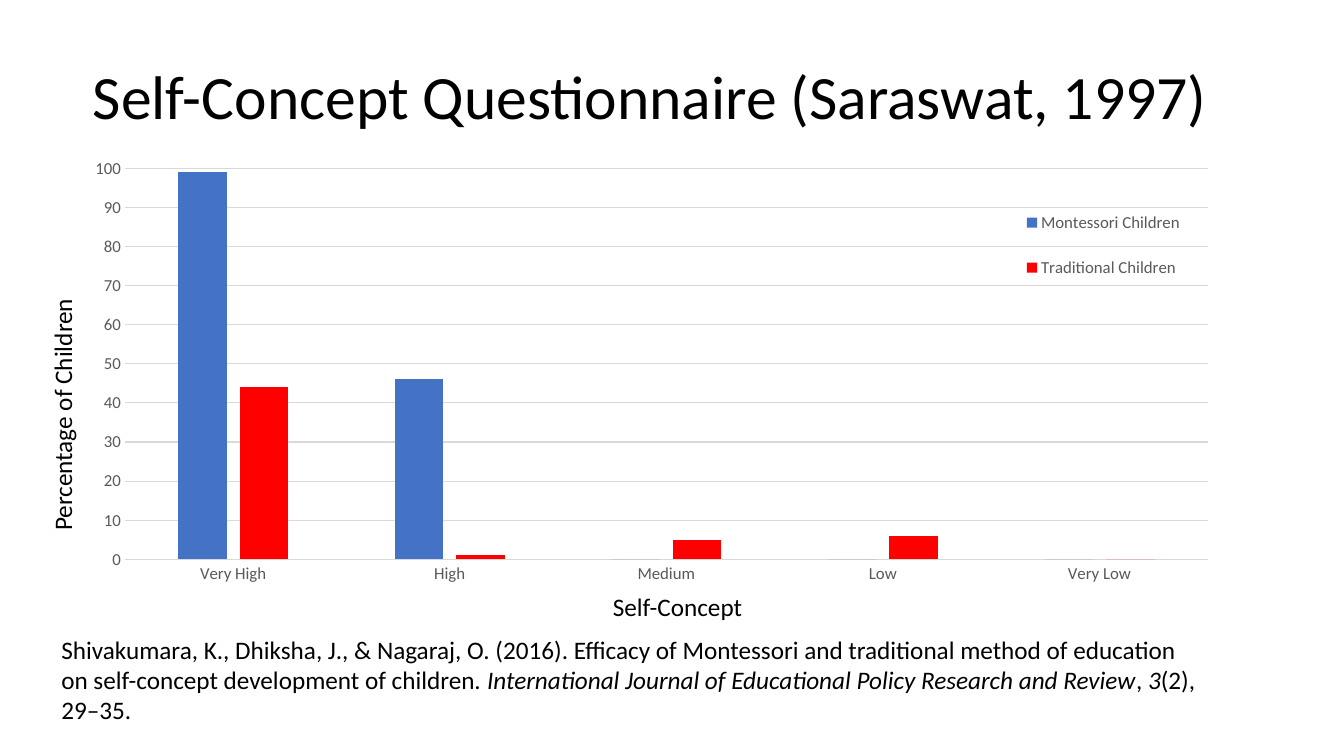
from dataclasses import dataclass

from lxml import etree
from pptx import Presentation
from pptx.chart.data import CategoryChartData
from pptx.dml.color import RGBColor
from pptx.enum import chart as ch, text as tx
from pptx.util import Inches, Pt


@dataclass(frozen=True)
class Theme:
    font: str = "Calibri"
    ink: str = "000000"
    grey: str = "595959"
    grid: str = "D9D9D9"
    bars: tuple = ("4472C4", "FF0000")
    title: int = 44
    body: int = 18
    label: int = 12
    line: float = 0.75


THEME = Theme()
LEVELS = ("Very High", "High", "Medium", "Low", "Very Low")
SCORES = {
    "Montessori Children": (99, 46, 0, 0, 0),
    "Traditional Children": (44, 1, 5, 6, 0),
}
SOURCE = (
    ("Shivakumara, K., Dhiksha, J., & Nagaraj, O. (2016). Efficacy of "
     "Montessori and traditional method of education on self-concept "
     "development of children. ", False),
    ("International Journal of Educational Policy Research and Review", True),
    (", ", False),
    ("3", True),
    ("(2), 29–35.", False),
)


def style(font, size, color=THEME.ink):
    font.name = THEME.font
    font.size = Pt(size)
    font.color.rgb = RGBColor.from_string(color)


def place(shape, left, top, width, height):
    shape.left, shape.top = Inches(left), Inches(top)
    shape.width, shape.height = Inches(width), Inches(height)


def add_title(slide, words, box):
    title = slide.shapes.title
    place(title, *box)
    frame = title.text_frame
    frame.text = words
    frame.word_wrap = False
    frame.auto_size = tx.MSO_AUTO_SIZE.SHAPE_TO_FIT_TEXT
    frame.vertical_anchor = tx.MSO_ANCHOR.TOP
    para = frame.paragraphs[0]
    para.alignment = tx.PP_ALIGN.LEFT
    style(para.font, THEME.title)


def add_text(slide, parts, box, turn=0):
    """Add a text box from (words, italic) pairs."""
    shape = slide.shapes.add_textbox(*map(Inches, box))
    shape.rotation = turn
    frame = shape.text_frame
    frame.word_wrap = True
    frame.auto_size = tx.MSO_AUTO_SIZE.SHAPE_TO_FIT_TEXT
    para = frame.paragraphs[0]
    style(para.font, THEME.body)
    for words, slant in parts:
        run = para.add_run()
        run.text = words
        if slant:
            run.font.italic = True


def make_layout(left, top, width, height, inner=False):
    """Return a chart layout element; lengths are shares of the chart."""
    space = "http://schemas.openxmlformats.org/drawingml/2006/chart"
    layout = etree.Element(f"{{{space}}}layout", nsmap={"c": space})
    manual = etree.SubElement(layout, f"{{{space}}}manualLayout")
    pairs = [("layoutTarget", "inner")] if inner else []
    pairs += [("xMode", "edge"), ("yMode", "edge"),
              ("x", left), ("y", top), ("w", width), ("h", height)]
    for name, value in pairs:
        etree.SubElement(manual, f"{{{space}}}{name}", val=str(value))
    return layout


def set_line(line):
    line.color.rgb = RGBColor.from_string(THEME.grid)
    line.width = Pt(THEME.line)


def format_axes(chart):
    levels, share = chart.category_axis, chart.value_axis
    for axis in (levels, share):
        axis.major_tick_mark = axis.minor_tick_mark = ch.XL_TICK_MARK.NONE
        style(axis.tick_labels.font, THEME.label, THEME.grey)
    set_line(levels.format.line)
    share.format.line.fill.background()
    share.minimum_scale, share.maximum_scale = 0, 100
    share.major_unit = 10
    share.has_major_gridlines = True
    set_line(share.major_gridlines.format.line)


def format_legend(chart):
    chart.has_legend = True
    legend = chart.legend
    legend.position = ch.XL_LEGEND_POSITION.BOTTOM
    legend.include_in_layout = False
    style(legend.font, THEME.label, THEME.grey)
    root = legend._element
    for old in root.findall("{*}layout"):
        root.remove(old)
    root.find("{*}legendPos").addnext(make_layout(0.81, 0.08, 0.16, 0.24))


def add_bars(slide, box):
    data = CategoryChartData()
    data.categories = LEVELS
    for name, values in SCORES.items():
        data.add_series(name, values)
    kind = ch.XL_CHART_TYPE.COLUMN_CLUSTERED
    chart = slide.shapes.add_chart(kind, *map(Inches, box), data).chart
    chart.has_title = False
    style(chart.font, 10)
    plot = chart.plots[0]
    plot.vary_by_categories = False
    plot.gap_width, plot.overlap = 219, -27
    for series, color in zip(plot.series, THEME.bars):
        series.format.fill.solid()
        series.format.fill.fore_color.rgb = RGBColor.from_string(color)
    format_axes(chart)
    format_legend(chart)
    area = chart._chartSpace.find(".//{*}plotArea")
    for old in area.findall("{*}layout"):
        area.remove(old)
    area.insert(0, make_layout(0.046, 0.04, 0.934, 0.815, inner=True))


def main():
    deck = Presentation()
    deck.slide_width, deck.slide_height = Inches(13.33), Inches(7.5)
    slide = deck.slides.add_slide(deck.slide_layouts[5])
    add_bars(slide, (0.71, 1.48, 11.5, 4.76))
    add_text(slide, [("Percentage of Children", False)],
             (-1.01, 3.54, 3.25, 0.4), turn=270)
    add_text(slide, [("Self-Concept", False)], (5.98, 5.82, 3.04, 0.4))
    add_text(slide, SOURCE, (0.51, 6.24, 11.56, 1.01))
    add_title(slide, "Self-Concept Questionnaire (Saraswat, 1997)",
              (0.82, 0.52, 11.38, 0.84))
    deck.save("out.pptx")


if __name__ == "__main__":
    main()
